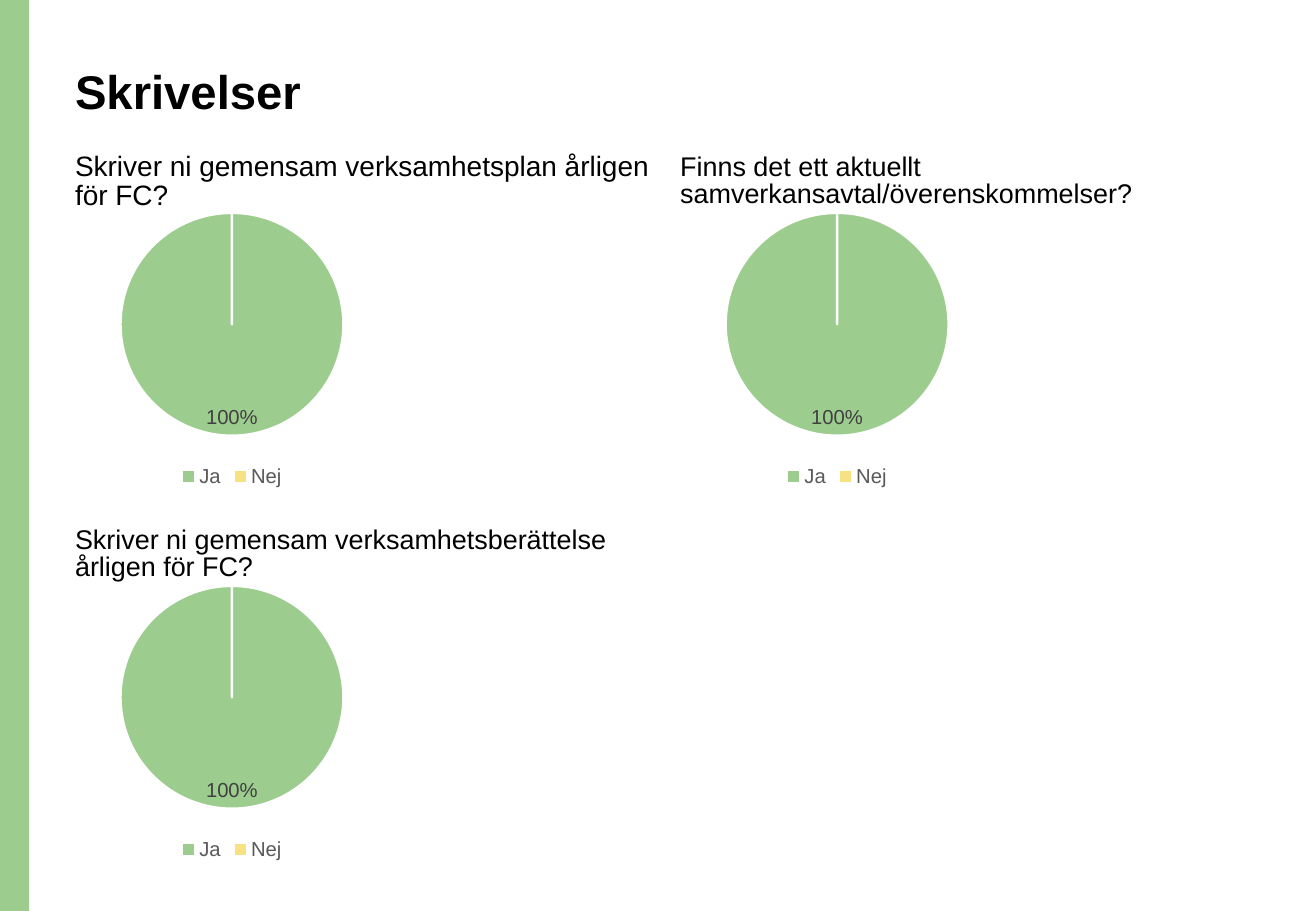
from lxml import etree
from pptx import Presentation
from pptx import util as u
from pptx.chart.data import CategoryChartData
from pptx.dml.color import RGBColor
from pptx.enum import chart as ch, shapes

GREEN, YELLOW, WHITE = "9DCC8F", "F6E183", "FFFFFF"
BLACK, DARK, GREY = "000000", "404040", "595959"


def rgb(code):
    return RGBColor.from_string(code)


class Page:
    face = "Arial"

    def __init__(self, deck):
        self.slide = deck.slides.add_slide(deck.slide_layouts[6])

    def style(self, font, size, color, bold=False):
        font.name, font.size, font.bold = self.face, u.Pt(size), bold
        font.color.rgb = rgb(color)

    def bar(self, x, y, w, h, color):
        bar = self.slide.shapes.add_shape(
            shapes.MSO_SHAPE.RECTANGLE, u.Cm(x), u.Cm(y), u.Cm(w), u.Cm(h))
        bar.shadow.inherit = False
        bar.fill.solid()
        bar.fill.fore_color.rgb = rgb(color)
        bar.line.fill.background()

    def text(self, words, x, y, w, h, size, gap, bold=False, inset=0.13):
        box = self.slide.shapes.add_textbox(u.Cm(x), u.Cm(y), u.Cm(w), u.Cm(h))
        frame = box.text_frame
        frame.word_wrap = True
        frame.margin_top = u.Cm(inset)
        para = frame.paragraphs[0]
        para.text = words
        para.line_spacing = gap
        self.style(para.font, size, BLACK, bold)

    def pie(self, x, y, w, h, names, values, colors):
        data = CategoryChartData(number_format="0%")
        data.categories = names
        data.add_series("Series 1", values)
        chart = self.slide.shapes.add_chart(
            ch.XL_CHART_TYPE.PIE, u.Cm(x), u.Cm(y), u.Cm(w), u.Cm(h), data).chart
        self.style(chart.font, 10, BLACK)
        chart.has_title = False
        chart.has_legend = True
        chart.legend.position = ch.XL_LEGEND_POSITION.BOTTOM
        chart.legend.include_in_layout = False
        self.style(chart.legend.font, 12, GREY)
        plot = chart.plots[0]
        plot.vary_by_categories = True
        series = plot.series[0]
        for i, color in enumerate(colors):
            form = series.points[i].format
            form.fill.solid()
            form.fill.fore_color.rgb = rgb(color)
            form.line.color.rgb = rgb(WHITE)
            form.line.width = u.Pt(1.5)
        labels = series.data_labels
        labels.show_value = True
        labels.number_format, labels.number_format_is_linked = "0%", False
        labels.position = ch.XL_LABEL_POSITION.INSIDE_END
        self.style(labels.font, 12, DARK)
        # Hide the labels of empty slices
        root = labels._element
        ns = "{" + root.nsmap["c"] + "}"
        empty = [i for i, value in enumerate(values) if not value]
        for spot, i in enumerate(empty):
            label = etree.Element(ns + "dLbl")
            etree.SubElement(label, ns + "idx").set("val", str(i))
            etree.SubElement(label, ns + "delete").set("val", "1")
            root.insert(spot, label)


def main():
    deck = Presentation()
    deck.slide_width, deck.slide_height = u.Cm(27.51), u.Cm(19.05)
    page = Page(deck)

    # Side bar and title
    left, right, top, low = 1.32, 13.97, 3.1, 10.9
    page.bar(0, 0, 0.61, 19.05, GREEN)
    page.text("Skrivelser", left, 1.22, 23.72, 2.59, 28, 0.9, True, 0.22)

    # Questions, each with its pie of answers
    asks = [
        ("Skriver ni gemensam verksamhetsplan årligen för FC?",
         left, top, 12.65, 16.6),
        ("Skriver ni gemensam verksamhetsberättelse årligen för FC?",
         left, low, 12.42, 16),
        ("Finns det ett aktuellt samverkansavtal/överenskommelser?",
         right, top, 12.42, 16),
    ]
    for words, x, y, w, size in asks:
        page.text(words, x, y, w, 1.45, size, 0.84)
        page.pie(x, y + 1, 7.06, 6.2, ["Ja", "Nej"], [1, 0], [GREEN, YELLOW])

    deck.save("out.pptx")


if __name__ == "__main__":
    main()
